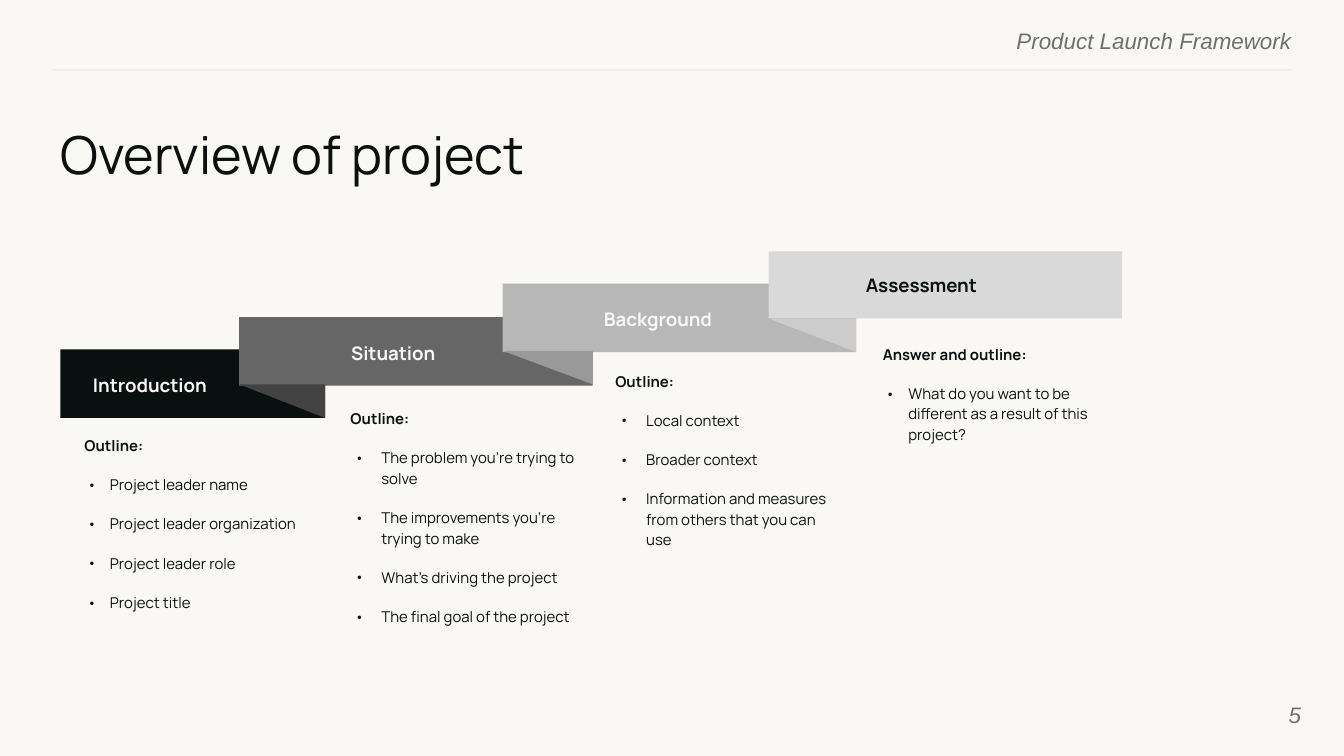
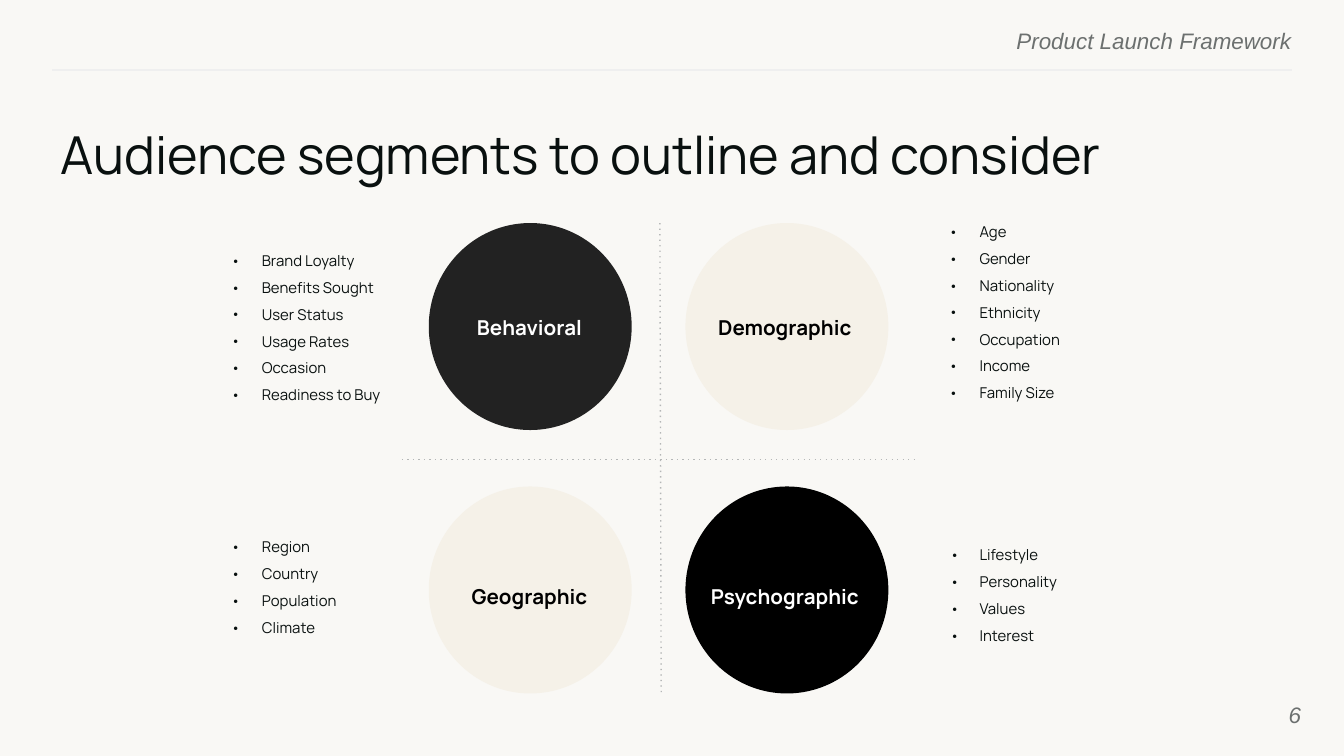
"""Builds two slides of a product launch framework: project overview and audience segments."""
from dataclasses import dataclass

from lxml import etree
from pptx import Presentation
from pptx import util as u
from pptx.dml.color import RGBColor
from pptx.enum import shapes, text
from pptx.oxml import ns

PX = 9144
LEFT, CENTER, RIGHT = text.PP_ALIGN.LEFT, text.PP_ALIGN.CENTER, text.PP_ALIGN.RIGHT
TOP, MIDDLE = text.MSO_ANCHOR.TOP, text.MSO_ANCHOR.MIDDLE
RECTANGLE, OVAL = shapes.MSO_SHAPE.RECTANGLE, shapes.MSO_SHAPE.OVAL


@dataclass(frozen=True)
class Theme:
    """Colours, fonts and type sizes of the deck."""
    paper: str = "F9F8F5"
    ink: str = "09100F"
    muted: str = "6C706F"
    rule: str = "EFEFEF"
    dots: str = "B5B7B7"
    cream: str = "F5F1E8"
    charcoal: str = "222222"
    black: str = "000000"
    white: str = "FFFFFF"
    ribbons: tuple = ("09100F", "666666", "B7B7B7", "D9D9D9")
    folds: tuple = ("434343", "999999", "CCCCCC")
    font: str = "Manrope"
    running_font: str = "Arial"
    title: int = 28
    running: int = 12
    segment: int = 11
    step: int = 10
    body: int = 8


class Slides:
    """Holds the theme, the deck and the current page."""

    def __init__(self, theme):
        self.theme = theme
        self.deck = Presentation()
        self.deck.slide_width = u.Emu(1000 * PX)
        self.deck.slide_height = u.Emu(1000 * PX * 9 // 16)
        self.page = None

    def new_page(self, title, number):
        """Starts a page with its header, rule, title and number."""
        theme = self.theme
        self.page = self.deck.slides.add_slide(self.deck.slide_layouts[6])
        self.paint(self.page.background.fill, theme.paper)
        running = dict(size=theme.running, color=theme.muted, align=RIGHT,
                       font=theme.running_font, italic=True)
        self.text((576, 20, 385, 18), ["Product Launch Framework"], **running)
        self.line((961, 52), (39, 52), theme.rule)
        self.text((908, 510, 60, 43), [str(number)], anchor=MIDDLE, **running)
        self.text((45, 91, 923, 51), [title], theme.title, theme.ink)

    def paint(self, fill, color):
        """Gives a fill one solid colour."""
        fill.solid()
        fill.fore_color.rgb = RGBColor.from_string(color)

    def finish(self, shape, color):
        """Makes a shape flat, without outline or shadow."""
        self.paint(shape.fill, color)
        shape.line.fill.background()
        shape.shadow.inherit = False

    def shape(self, kind, area, color):
        """Adds a preset shape."""
        self.finish(self.page.shapes.add_shape(kind, *(u.Emu(n * PX) for n in area)), color)

    def fold(self, left, top, width, height, color):
        """Adds the triangular underside of a folded ribbon."""
        outline = self.page.shapes.build_freeform(left + width, top + height, scale=PX)
        outline.add_line_segments([(left + width, top), (left, top)], close=True)
        self.finish(outline.convert_to_shape(), color)

    def line(self, start, end, color, dash=None):
        """Adds a thin straight line, dashed on request."""
        line = self.page.shapes.add_connector(
            shapes.MSO_CONNECTOR.STRAIGHT, *(u.Emu(n * PX) for n in start + end))
        self.paint(line.line.fill, color)
        line.line.width = u.Pt(0.75)
        properties = line.element.spPr
        if dash:
            stroke = properties.find(ns.qn("a:ln"))
            etree.SubElement(stroke, ns.qn("a:prstDash"), val=dash)
        etree.SubElement(properties, ns.qn("a:effectLst"))

    def text(self, area, lines, size, color, align=LEFT, anchor=TOP, font=None,
             bold=False, italic=False, spacing=None, insets=(0, 0, 0, 0)):
        """Adds a wrapped text box and returns its paragraphs."""
        box = self.page.shapes.add_textbox(*(u.Emu(n * PX) for n in area))
        frame = box.text_frame
        frame.word_wrap = True
        frame.vertical_anchor = anchor
        (frame.margin_left, frame.margin_top,
         frame.margin_right, frame.margin_bottom) = (u.Emu(n * PX) for n in insets)
        frame.text = "\n".join(lines)
        for para in frame.paragraphs:
            para.alignment = align
            para.line_spacing = spacing
            for span in para.runs:
                span.font.name = font or self.theme.font
                span.font.size = u.Pt(size)
                span.font.bold, span.font.italic = bold, italic
                span.font.color.rgb = RGBColor.from_string(color)
        return frame.paragraphs

    def bullet(self, para, margin, hang):
        """Turns a paragraph into a hanging bullet."""
        properties = para._p.get_or_add_pPr()
        properties.set("marL", str(margin * PX))
        properties.set("indent", str(-hang * PX))
        tint = etree.SubElement(properties, ns.qn("a:buClr"))
        etree.SubElement(tint, ns.qn("a:srgbClr"), val=self.theme.ink)
        etree.SubElement(properties, ns.qn("a:buFont"), typeface=self.theme.font)
        etree.SubElement(properties, ns.qn("a:buChar"), char="•")

    def outline(self, area, heading, items, margin, hang):
        """Adds a bold heading with spaced bullets below it."""
        first, *rest = self.text(area, [heading, *items], self.theme.body, self.theme.ink,
                                 spacing=1.15, insets=(10, 5, 10, 5))
        first.runs[0].font.bold = True
        for para in rest:
            para.space_before = u.Pt(10)
            self.bullet(para, margin, hang)

    def traits(self, area, items, top_inset, hang):
        """Adds a vertically centred bullet list."""
        for para in self.text(area, items, self.theme.body, self.theme.ink, anchor=MIDDLE,
                              spacing=1.5, insets=(10, top_inset, 10, 5)):
            self.bullet(para, 24, hang)


def build_overview(slides):
    """Draws the rising ribbon with an outline under each step."""
    theme = slides.theme
    slides.new_page("Overview of project", 5)
    ribbons = [(45, 260, 197, 51), (178, 236, 263, 51), (374, 211, 263, 51), (572, 187, 263, 50)]
    labels = [("Introduction", (45, 260, 133, 51), theme.paper),
              ("Situation", (178, 236, 229, 51), theme.paper),
              ("Background", (375, 212, 229, 49), theme.paper),
              ("Assessment", (571, 185, 229, 51), theme.ink)]
    outlines = [
        ((53, 318, 190, 182), "Outline:",
         ["Project leader name", "Project leader organization", "Project leader role",
          "Project title"], 19, 17),
        ((251, 298, 190, 164), "Outline:",
         ["The problem you’re trying to solve", "The improvements you’re trying to make",
          "What’s driving the project", "The final goal of the project"], 23, 20),
        ((448, 270, 190, 161), "Outline:",
         ["Local context", "Broader context",
          "Information and measures from others that you can use"], 23, 20),
        ((647, 250, 197, 99), "Answer and outline:",
         ["What do you want to be different as a result of this project?"], 19, 17)]
    for area, color in zip(ribbons, theme.ribbons):
        slides.shape(RECTANGLE, area, color)
    for lower, upper, color in zip(ribbons, ribbons[1:], theme.folds):
        left, top = upper[:2]
        slides.fold(left, top + 50, lower[0] + lower[2] - left, 25, color)
    for name, area, color in labels:
        slides.text(area, [name], theme.step, color, CENTER, MIDDLE, bold=True, spacing=1.15)
    for outline in outlines:
        slides.outline(*outline)


def build_segments(slides):
    """Draws four audience circles in a dotted cross with their traits."""
    theme = slides.theme
    slides.new_page("Audience segments to outline and consider", 6)
    segments = [("Behavioral", theme.charcoal, theme.white),
                ("Demographic", theme.cream, theme.black),
                ("Geographic", theme.cream, theme.black),
                ("Psychographic", theme.black, theme.white)]
    traits = [
        ((161, 160, 176, 147),
         ["Brand Loyalty", "Benefits Sought", "User Status", "Usage Rates", "Occasion",
          "Readiness to Buy"], 19, 23),
        ((695, 389, 133, 101), ["Lifestyle", "Personality", "Values", "Interest"], 5, 22),
        ((161, 376, 122, 101), ["Region", "Country", "Population", "Climate"], 19, 23),
        ((695, 137, 197, 170),
         ["Age", "Gender", "Nationality", "Ethnicity", "Occupation", "Income",
          "Family Size"], 19, 23)]
    for index, (_, fill, _) in enumerate(segments):
        row, column = divmod(index, 2)
        slides.shape(OVAL, (319 + 191 * column, 166 + 196 * row, 151, 154), fill)
    slides.line((299, 342), (681, 342), theme.dots, "dot")
    slides.line((491, 166), (492, 518), theme.dots, "dot")
    for index, (name, _, color) in enumerate(segments):
        row, column = divmod(index, 2)
        slides.text((315 + 190 * column, 230 + 200 * row, 158, 27), [name], theme.segment, color,
                    CENTER, MIDDLE, bold=True, insets=(10, 10, 10, 10))
    for group in traits:
        slides.traits(*group)


def main():
    """Builds and saves the deck."""
    slides = Slides(Theme())
    build_overview(slides)
    build_segments(slides)
    slides.deck.save("out.pptx")


if __name__ == "__main__":
    main()
